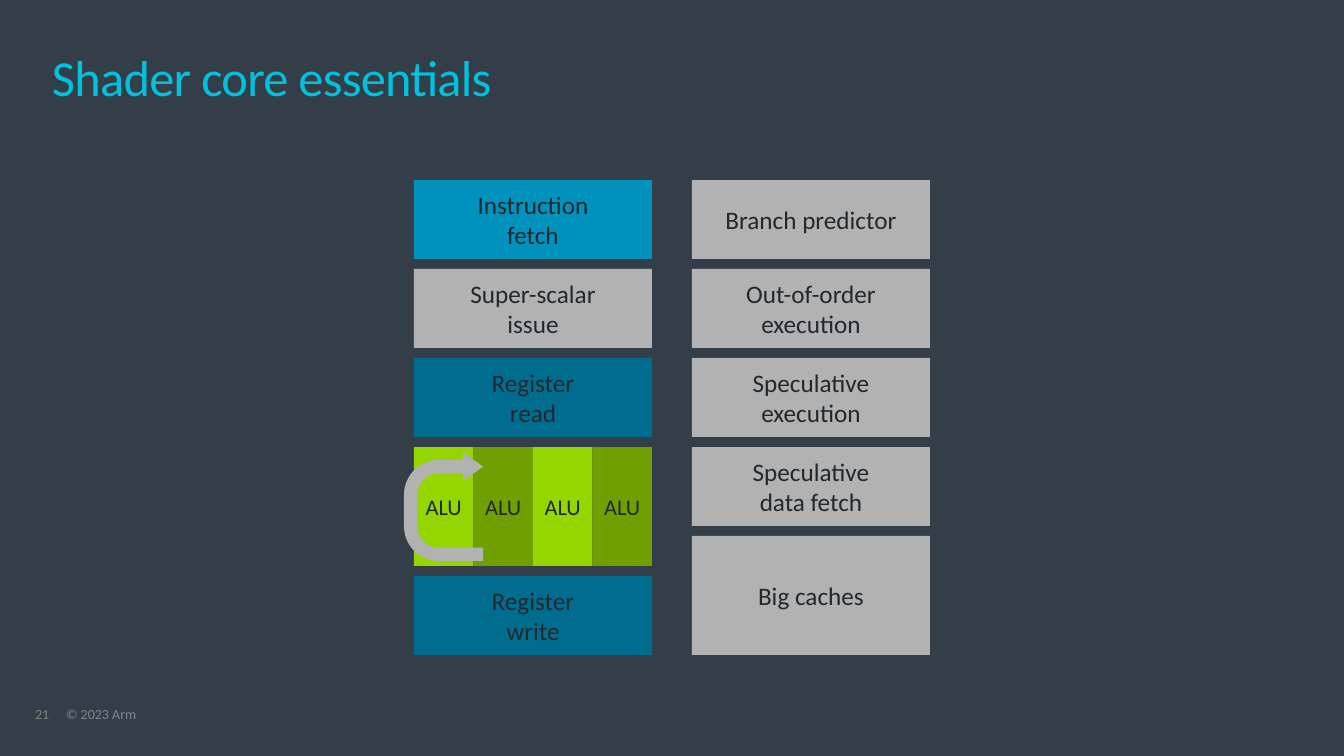
from dataclasses import dataclass

from pptx import Presentation
from pptx.dml.color import RGBColor
from pptx.enum.shapes import MSO_SHAPE
from pptx.enum.text import MSO_ANCHOR, PP_ALIGN
from pptx.util import Emu, Pt

RECT, UTURN = MSO_SHAPE.RECTANGLE, MSO_SHAPE.U_TURN_ARROW
TOP, MIDDLE = MSO_ANCHOR.TOP, MSO_ANCHOR.MIDDLE
LEFT, CENTER = PP_ALIGN.LEFT, PP_ALIGN.CENTER

SLIDE_W, SLIDE_H = 1344, 756
EMU_PER_PX = 12192000 / SLIDE_W

COLUMN_TOP, COLUMN_W = 180, 238
STAGES_X, EXTRAS_X = 414, 692
BLOCK_H, ALU_H, GAP = 79, 119, 10
ALU_COUNT = 4


@dataclass(frozen=True)
class Theme:
    font: str = "Calibri"
    background: str = "333E48"
    title: str = "00C1DE"
    ink: str = "21292F"
    number: str = "7F7F7F"
    copyright: str = "7D868C"
    fetch: str = "0091BD"
    register: str = "006D8E"
    removed: str = "B2B2B2"
    alu_light: str = "95D600"
    alu_dark: str = "70A000"
    title_size: int = 36
    block_size: int = 18
    alu_size: int = 16
    footer_size: int = 10


THEME = Theme()


@dataclass(frozen=True)
class Block:
    text: str
    fill: str = THEME.removed
    height: int = BLOCK_H


@dataclass(frozen=True)
class Footer:
    text: str
    x: int
    w: int
    color: str


ALU_ROW = Block("ALU", THEME.alu_light, ALU_H)
STAGES = [
    Block("Instruction\nfetch", THEME.fetch),
    Block("Super-scalar\nissue"),
    Block("Register\nread", THEME.register),
    ALU_ROW,
    Block("Register\nwrite", THEME.register),
]
EXTRAS = [
    Block("Branch predictor"),
    Block("Out-of-order\nexecution"),
    Block("Speculative\nexecution"),
    Block("Speculative\ndata fetch"),
    Block("Big caches", height=ALU_H),
]
FOOTERS = [
    Footer("21", 35, 34, THEME.number),
    Footer("© 2023 Arm", 66, 511, THEME.copyright),
]


def px(n: float) -> Emu:
    return Emu(round(n * EMU_PER_PX))


def write(sp, text: str, size: int, color: str, align=LEFT, anchor=TOP,
          spacing: float = 1.0) -> None:
    """Put one paragraph, with its line breaks, into a shape."""
    tf = sp.text_frame
    tf.word_wrap = True
    tf.vertical_anchor = anchor
    p = tf.paragraphs[0]
    p.text = text
    p.alignment = align
    p.line_spacing = spacing
    for r in p.runs:
        r.font.name = THEME.font
        r.font.size = Pt(size)
        r.font.color.rgb = RGBColor.from_string(color)


def clear_margins(sp) -> None:
    tf = sp.text_frame
    tf.margin_left = tf.margin_top = tf.margin_right = tf.margin_bottom = 0


def add_filled(s, kind, x: float, y: int, w: float, h: int, fill: str):
    sp = s.shapes.add_shape(kind, px(x), px(y), px(w), px(h))
    sp.shadow.inherit = False
    sp.fill.solid()
    sp.fill.fore_color.rgb = RGBColor.from_string(fill)
    sp.line.fill.background()
    return sp


def add_alus(s, x: int, y: int) -> None:
    w = COLUMN_W / ALU_COUNT
    for i in range(ALU_COUNT):
        fill = THEME.alu_dark if i % 2 else THEME.alu_light
        sp = add_filled(s, RECT, x + i * w, y, w, ALU_H, fill)
        write(sp, ALU_ROW.text, THEME.alu_size, THEME.ink, CENTER, MIDDLE)


def add_column(s, x: int, blocks: list[Block]) -> None:
    y = COLUMN_TOP
    for block in blocks:
        if block is ALU_ROW:
            add_alus(s, x, y)
        else:
            sp = add_filled(s, RECT, x, y, COLUMN_W, block.height, block.fill)
            write(sp, block.text, THEME.block_size, THEME.ink, CENTER, MIDDLE)
        y += block.height + GAP


def add_forwarding_arrow(s) -> None:
    sp = add_filled(s, UTURN, 389, 467, 109, 79, THEME.removed)
    sp.rotation = 270
    for i, value in enumerate((0.168, 0.185, 0.25, 0.438, 1)):
        sp.adjustments[i] = value


def add_title(s, text: str) -> None:
    sp = s.shapes.title
    sp.left, sp.top, sp.width, sp.height = px(52), px(52), px(1238), px(58)
    clear_margins(sp)
    write(sp, text, THEME.title_size, THEME.title, anchor=MIDDLE, spacing=0.85)
    for r in sp.text_frame.paragraphs[0].runs:
        r.font._element.set("spc", "-50")


def add_footer(s, footer: Footer) -> None:
    sp = s.shapes.add_textbox(px(footer.x), px(707), px(footer.w), px(15))
    clear_margins(sp)
    write(sp, footer.text, THEME.footer_size, footer.color, spacing=0.9)


def main() -> None:
    prs = Presentation()
    prs.slide_width, prs.slide_height = px(SLIDE_W), px(SLIDE_H)
    s = prs.slides.add_slide(prs.slide_layouts[5])
    s.background.fill.solid()
    s.background.fill.fore_color.rgb = RGBColor.from_string(THEME.background)
    add_title(s, "Shader core essentials")
    for footer in FOOTERS:
        add_footer(s, footer)
    add_column(s, STAGES_X, STAGES)
    add_column(s, EXTRAS_X, EXTRAS)
    add_forwarding_arrow(s)
    prs.save("out.pptx")


if __name__ == "__main__":
    main()
